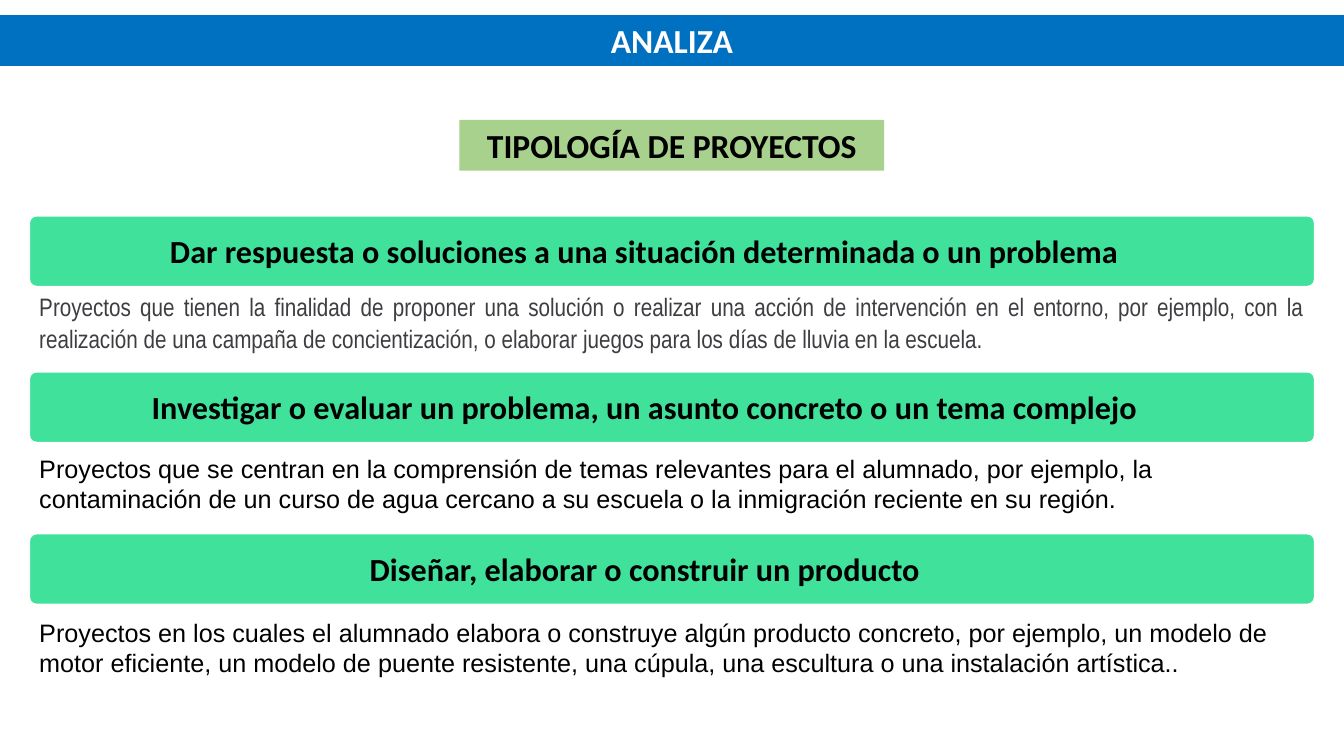
from dataclasses import dataclass

from pptx import Presentation
from pptx.dml.color import RGBColor
from pptx.enum.shapes import MSO_SHAPE
from pptx.enum.text import MSO_ANCHOR, PP_ALIGN
from pptx.util import Cm, Pt


@dataclass(frozen=True)
class Theme:
    blue: str = "0070C0"
    green: str = "A9D18E"
    mint: str = "3FE19B"
    white: str = "FFFFFF"
    black: str = "000000"
    gray: str = "3D3E41"
    title: int = 24
    head: int = 23
    body: int = 18
    bold_font: str = "Calibri"
    body_font: str = "Arial"
    slim_font: str = "Arial Narrow"


THEME = Theme()
WIDTH, HEIGHT = 33.87, 19.05
LEFT, SPAN = 0.74, 32.39
BAR = 1.78

TYPES = [
    (5.44, 7.16, "Dar respuesta o soluciones a una situación determinada o un problema",
     "Proyectos que tienen la finalidad de proponer una solución o realizar una acción "
     "de intervención en el entorno, por ejemplo, con la realización de una campaña de "
     "concientización, o elaborar juegos para los días de lluvia en la escuela.",
     dict(font=THEME.slim_font, color=THEME.gray, align=PP_ALIGN.JUSTIFY, spacing=1.07)),
    (9.37, 11.3, "Investigar o evaluar un problema, un asunto concreto o un tema complejo",
     "Proyectos que se centran en la comprensión de temas relevantes para el alumnado, "
     "por ejemplo, la contaminación de un curso de agua cercano a su escuela o la "
     "inmigración reciente en su región.", {}),
    (13.45, 15.42, "Diseñar, elaborar o construir un producto",
     "Proyectos en los cuales el alumnado elabora o construye algún producto concreto, "
     "por ejemplo, un modelo de motor eficiente, un modelo de puente resistente, una "
     "cúpula, una escultura o una instalación artística..", {}),
]


def tint(text):
    return RGBColor.from_string(text)


def write(shape, text, *, size, font, color=THEME.black, bold=False,
          align=PP_ALIGN.LEFT, anchor=MSO_ANCHOR.TOP, spacing=None, inset=None):
    frame = shape.text_frame
    frame.word_wrap = True
    frame.vertical_anchor = anchor
    if inset is not None:
        frame.margin_left = frame.margin_right = Cm(inset)
        frame.margin_top = frame.margin_bottom = Cm(inset)
    para = frame.paragraphs[0]
    para.alignment = align
    if spacing:
        para.line_spacing = spacing
    run = para.add_run()
    run.text = text
    run.font.size = Pt(size)
    run.font.name = font
    run.font.bold = bold
    run.font.color.rgb = tint(color)


def add_block(slide, kind, box, fill):
    shape = slide.shapes.add_shape(kind, *map(Cm, box))
    shape.shadow.inherit = False
    shape.fill.solid()
    shape.fill.fore_color.rgb = tint(fill)
    shape.line.fill.background()
    return shape


def add_label(slide, box, text, fill, color):
    shape = add_block(slide, MSO_SHAPE.RECTANGLE, box, fill)
    write(shape, text, size=THEME.title, font=THEME.bold_font, color=color,
          bold=True, align=PP_ALIGN.CENTER)


def add_head(slide, box, text):
    left, top, width, height = box
    bar = add_block(slide, MSO_SHAPE.ROUNDED_RECTANGLE, box, THEME.mint)
    bar.adjustments[0] = 0.1
    bar.line.color.rgb = tint(THEME.white)
    bar.line.width = Pt(1)
    area = (left, top + 0.1, width - 1.35, height - 0.1)
    label = slide.shapes.add_textbox(*map(Cm, area))
    write(label, text, size=THEME.head, font=THEME.bold_font, bold=True,
          align=PP_ALIGN.CENTER, anchor=MSO_ANCHOR.MIDDLE, spacing=0.9, inset=0.25)


def add_body(slide, box, text, style):
    area = slide.shapes.add_textbox(*map(Cm, box))
    write(area, text, **{"size": THEME.body, "font": THEME.body_font, **style})


def main():
    deck = Presentation()
    deck.slide_width, deck.slide_height = Cm(WIDTH), Cm(HEIGHT)
    slide = deck.slides.add_slide(deck.slide_layouts[6])
    add_label(slide, (11.58, 3.02, 10.7, 1.28), "TIPOLOGÍA DE PROYECTOS",
              THEME.green, THEME.black)
    for head_top, body_top, head, body, style in TYPES:
        add_head(slide, (LEFT, head_top, SPAN, BAR), head)
        add_body(slide, (LEFT, body_top, SPAN, 1.8), body, style)
    add_label(slide, (0, 0.38, WIDTH, 1.28), "ANALIZA", THEME.blue, THEME.white)
    deck.save("out.pptx")


if __name__ == "__main__":
    main()
